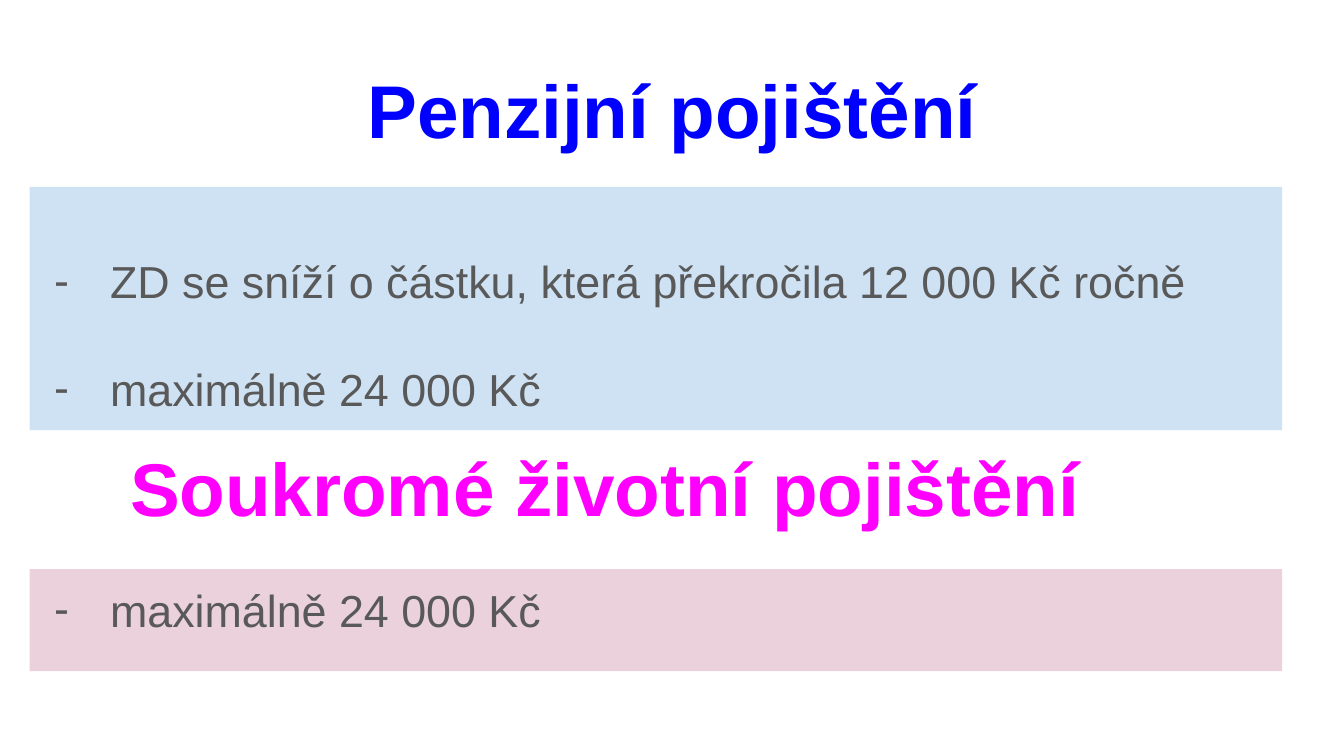
from dataclasses import dataclass

from lxml.etree import SubElement
from pptx import Presentation
from pptx.dml.color import RGBColor
from pptx.enum.shapes import MSO_SHAPE as Shape
from pptx.enum.text import MSO_ANCHOR as Anchor, PP_ALIGN as Align
from pptx.oxml.ns import qn
from pptx.util import Pt


@dataclass(frozen=True)
class Theme:
    font: str = "Arial"
    heading_size: int = 40
    body_size: int = 24
    body: str = "595959"
    pension: str = "0000FF"
    pension_panel: str = "CFE2F3"
    life: str = "FF00FF"
    life_panel: str = "EAD1DC"


theme = Theme()
INSET = 7.2
PANEL_LEFT, PANEL_WIDTH = 15.84, 671.04


def fill_text(shape, lines, size, color, bold=False, align=Align.LEFT, anchor=Anchor.TOP):
    frame = shape.text_frame
    frame.word_wrap = True
    frame.vertical_anchor = anchor
    frame.margin_left = frame.margin_right = Pt(INSET)
    frame.margin_top = frame.margin_bottom = Pt(INSET)
    frame.text = "\n".join(lines)
    for paragraph in frame.paragraphs:
        paragraph.alignment = align
        for run in paragraph.runs:
            run.font.name = theme.font
            run.font.size = Pt(size)
            run.font.bold = bold
            run.font.color.rgb = RGBColor.from_string(color)


def add_dash(paragraph):
    """Give the paragraph a hanging indent with a dash as its bullet."""
    properties = paragraph._p.get_or_add_pPr()
    properties.set("marL", str(Pt(36)))
    properties.set("indent", str(Pt(-30)))
    bullet_color = SubElement(properties, qn("a:buClr"))
    SubElement(bullet_color, qn("a:srgbClr"), val=theme.body)
    SubElement(properties, qn("a:buFont"), typeface=theme.font)
    SubElement(properties, qn("a:buChar"), char="-")


presentation = Presentation()
presentation.slide_width, presentation.slide_height = Pt(720), Pt(405)
slide = presentation.slides.add_slide(presentation.slide_layouts[6])

headings = [
    ("Penzijní pojištění", (24.5, 35.3, 671, 45.4), theme.pension, Align.CENTER, Anchor.MIDDLE),
    ("Soukromé životní pojištění", (62.6, 229.7, 577.4, 54.7), theme.life, Align.LEFT, Anchor.TOP),
]
for text, box, color, align, anchor in headings:
    heading = slide.shapes.add_textbox(*map(Pt, box))
    fill_text(heading, [text], theme.heading_size, color, True, align, anchor)

limit = "maximálně 24 000 Kč"
panels = [
    (100.1, 130.3, theme.pension_panel, 2.0,
     ["ZD se sníží o částku, která překročila 12 000 Kč ročně", limit]),
    (304.9, 54.7, theme.life_panel, 1.0, [limit]),
]
for top, height, fill, line_spacing, lines in panels:
    panel = slide.shapes.add_shape(
        Shape.RECTANGLE, Pt(PANEL_LEFT), Pt(top), Pt(PANEL_WIDTH), Pt(height))
    panel.shadow.inherit = False
    panel.fill.solid()
    panel.fill.fore_color.rgb = RGBColor.from_string(fill)
    panel.line.fill.background()
    fill_text(panel, lines, theme.body_size, theme.body)
    for paragraph in panel.text_frame.paragraphs:
        add_dash(paragraph)
        paragraph.line_spacing = line_spacing

presentation.save("out.pptx")
